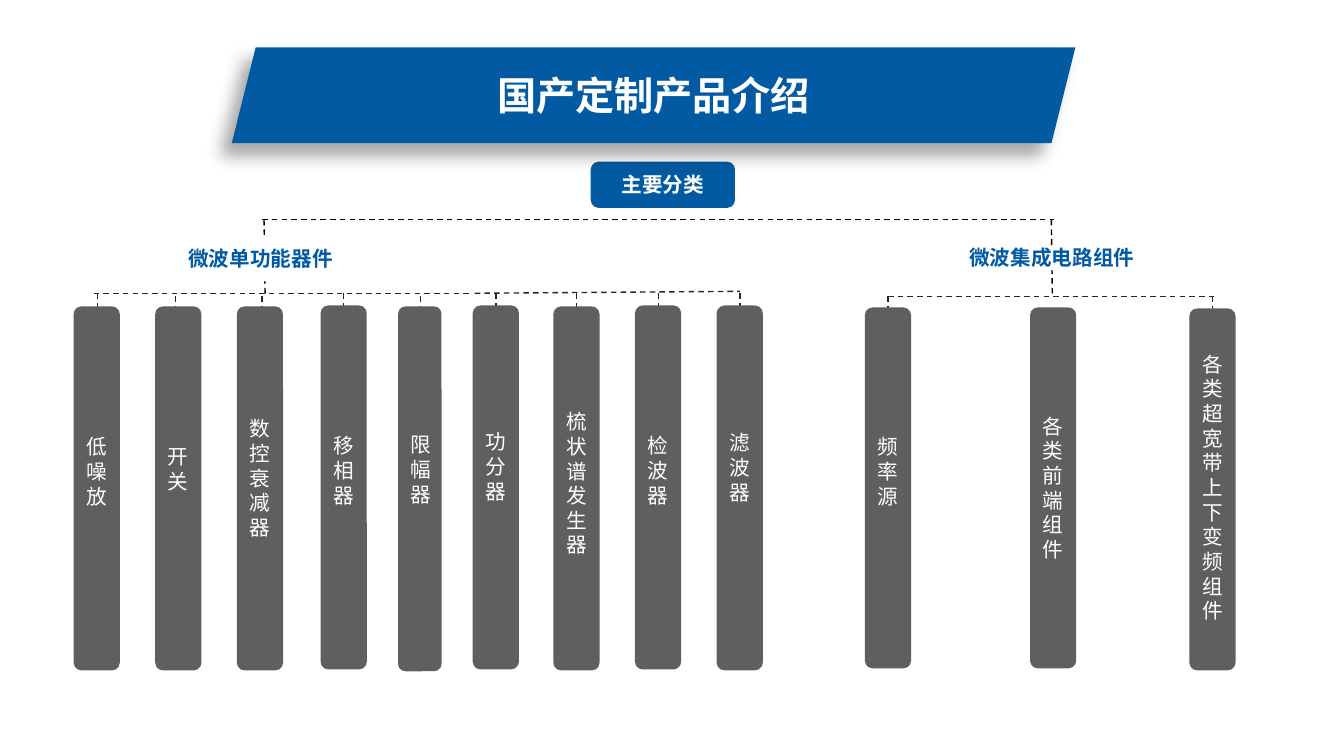
from lxml.etree import SubElement
from pptx import Presentation
from pptx.dml.color import RGBColor
from pptx.enum.dml import MSO_LINE
from pptx.enum.shapes import MSO_CONNECTOR, MSO_SHAPE
from pptx.enum.text import MSO_ANCHOR, PP_ALIGN
from pptx.oxml import parse_xml
from pptx.oxml.ns import nsdecls, qn
from pptx.util import Pt

FONT = "Noto Sans CJK SC"
BLUE, GREY, DARK, WHITE = "025AA2", "5F5F5F", "262626", "FFFFFF"
BAR_W, TAG_W, PITCH = 33, 25, 17.6

BARS = [
    (52.6, 218.9, 260, "低噪放", 310.3),
    (110.9, 218.9, 260, "开关", 317.5),
    (169.2, 218.9, 260, "数控衰减器", 297.4),
    (229, 218.2, 260, "移相器", 309.6),
    (284.4, 218.9, 260.6, "限幅器", 308.9),
    (337.7, 218.2, 260, "功分器", 306.7),
    (395.3, 218.9, 260, "梳状谱发生器", 292.3),
    (453.6, 218.2, 260, "检波器", 309.6),
    (511.9, 218.2, 260.6, "滤波器", 307.4),
    (617.8, 219.6, 257.8, "频率源", 310.3),
    (735.8, 219.6, 257.8, "各类前端组件", 295.5),
    (849.6, 220.3, 258.5, "各类超宽带上下变频组件", 251.3),
]
DROPS = [
    (209.5, (69.8, 245.5, 354.2, 411.8, 470.2, 528.5)),
    (211.7, (125.3, 187.2, 300.2, 634.3, 866.2)),
]


def color(code):
    """Turn a hex string into a colour."""
    return RGBColor.from_string(code)


def dash(slide, x1, y1, x2, y2, code=DARK):
    """Draw a dashed line."""
    line = slide.shapes.add_connector(
        MSO_CONNECTOR.STRAIGHT, Pt(x1), Pt(y1), Pt(x2), Pt(y2))
    line.line.color.rgb = color(code)
    line.line.width = Pt(1)
    line.line.dash_style = MSO_LINE.DASH
    SubElement(line._element.spPr, qn("a:effectLst"))


def block(slide, kind, x, y, wide, high, fill):
    """Draw a filled shape with no outline."""
    shape = slide.shapes.add_shape(kind, Pt(x), Pt(y), Pt(wide), Pt(high))
    shape.shadow.inherit = False
    shape.fill.solid()
    shape.fill.fore_color.rgb = color(fill)
    shape.line.fill.background()
    return shape


def write(shape, text, code, size=14.7, bold=False, pitch=None):
    """Put centred text in a shape."""
    frame = shape.text_frame
    frame.word_wrap = True
    frame.vertical_anchor = MSO_ANCHOR.MIDDLE
    frame.margin_left = frame.margin_right = 0
    frame.margin_top = frame.margin_bottom = 0
    para = frame.paragraphs[0]
    para.text = text
    para.alignment = PP_ALIGN.CENTER
    if pitch:
        para.line_spacing = Pt(pitch)
    font = para.font
    font.name, font.size, font.bold = FONT, Pt(size), bold
    font.color.rgb = color(code)
    props = para._p.pPr.find(qn("a:defRPr"))
    SubElement(props, qn("a:ea")).set("typeface", FONT)


def bar(slide, x, y, high, text, top):
    """Draw a tall bar with its name set one character a line."""
    wide = 31 if text == "限幅器" else BAR_W
    block(slide, MSO_SHAPE.ROUNDED_RECTANGLE, x, y, wide, high, GREY)
    tag = block(slide, MSO_SHAPE.RECTANGLE, x + 4, top, TAG_W,
                PITCH * len(text), GREY)
    write(tag, text, WHITE, pitch=PITCH)


def banner(slide, text):
    """Draw the title banner with its soft shadow."""
    shape = block(slide, MSO_SHAPE.PARALLELOGRAM, 165.6, 33.8, 602.6, 68.4, BLUE)
    effects = shape._element.spPr.find(qn("a:effectLst"))
    effects.append(parse_xml(
        f'<a:outerShdw {nsdecls("a")} blurRad="{Pt(12)}" dist="{Pt(12)}" '
        'dir="8100000" algn="tr" rotWithShape="0"><a:srgbClr val="000000">'
        '<a:alpha val="34000"/></a:srgbClr></a:outerShdw>'))
    write(shape, text, WHITE, 28, True)


def main():
    """Build the product overview slide."""
    deck = Presentation()
    deck.slide_width, deck.slide_height = Pt(960), Pt(540)
    slide = deck.slides.add_slide(deck.slide_layouts[6])

    dash(slide, 187.2, 157, 753.1, 157, "000000")
    dash(slide, 751, 157, 751.7, 211.7, "000000")
    dash(slide, 188.6, 157, 189.4, 211.7, "000000")
    dash(slide, 67, 209.5, 337, 209.5)
    dash(slide, 339.1, 209.5, 528.5, 208.1)
    dash(slide, 634.3, 211.7, 866.9, 211.7)
    for top, places in DROPS:
        for x in places:
            dash(slide, x, top, x, top + 104.5)

    group = block(slide, MSO_SHAPE.RECTANGLE, 653.8, 175, 195.1, 18, WHITE)
    write(group, "微波集成电路组件", BLUE, bold=True)
    group = block(slide, MSO_SHAPE.ROUNDED_RECTANGLE, 85, 168, 202, 33, WHITE)
    write(group, "微波单功能器件", BLUE, bold=True)
    for row in BARS:
        bar(slide, *row)
    root = block(slide, MSO_SHAPE.ROUNDED_RECTANGLE, 422, 115.5, 103, 33, BLUE)
    write(root, "主要分类", WHITE, bold=True)
    banner(slide, "国产定制产品介绍")
    deck.save("out.pptx")


if __name__ == "__main__":
    main()
